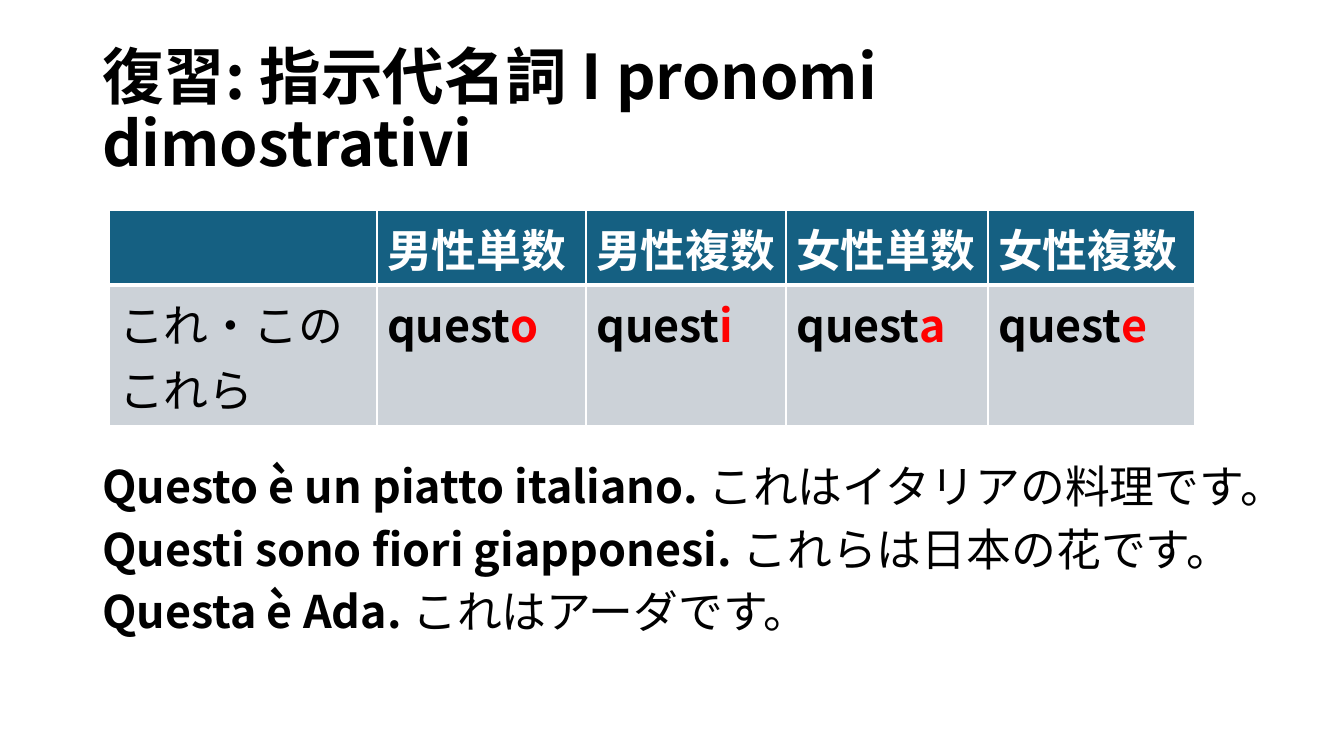
"""Build a slide that reviews the Italian demonstrative pronouns in Japanese."""

from dataclasses import dataclass

import lxml.etree
import pptx
import pptx.dml.color
import pptx.enum.text
import pptx.oxml.ns
import pptx.shapes.base
import pptx.slide
import pptx.table
import pptx.text.text
import pptx.util

PX = 9071
FONT_NAME = "Noto Sans CJK JP"
BLACK = pptx.dml.color.RGBColor(0x00, 0x00, 0x00)
WHITE = pptx.dml.color.RGBColor(0xFF, 0xFF, 0xFF)
RED = pptx.dml.color.RGBColor(0xFF, 0x00, 0x00)
TEAL = pptx.dml.color.RGBColor(0x15, 0x60, 0x82)
PALE_GREY = pptx.dml.color.RGBColor(0xCC, 0xD2, 0xD8)


@dataclass(frozen=True)
class Box:
    left: int
    top: int
    width: int
    height: int

    def emu(self) -> tuple[int, int, int, int]:
        return self.left * PX, self.top * PX, self.width * PX, self.height * PX


@dataclass(frozen=True)
class Pronoun:
    heading: str
    ending: str
    width: int


@dataclass(frozen=True)
class Example:
    italian: str
    japanese: str


TITLE = "復習: 指示代名詞 I pronomi dimostrativi"
TITLE_BOX = Box(92, 40, 1159, 146)
TABLE_BOX = Box(109, 210, 1085, 214)
BODY_BOX = Box(92, 460, 1213, 294)
LABEL_WIDTH = 268
ROW_HEIGHTS = (75, 139)
LABELS = ("これ・この", "これら")
STEM = "quest"
PRONOUNS = (
    Pronoun("男性単数", "o", 209),
    Pronoun("男性複数", "i", 200),
    Pronoun("女性単数", "a", 202),
    Pronoun("女性複数", "e", 206),
)
EXAMPLES = (
    Example("Questo è un piatto italiano. ", "これはイタリアの料理です。"),
    Example("Questi sono fiori giapponesi. ", "これらは日本の花です。"),
    Example("Questa è Ada. ", "これはアーダです。"),
)


def place(shape: pptx.shapes.base.BaseShape, box: Box) -> None:
    """Move and size a shape."""
    shape.left, shape.top, shape.width, shape.height = box.emu()


def format_paragraph(
    paragraph: pptx.text.text._Paragraph,
    size: int = 32,
    color: pptx.dml.color.RGBColor = BLACK,
    bold: bool | None = None,
) -> None:
    """Set the font shared by all runs of a paragraph."""
    font = paragraph.font
    font.name = FONT_NAME
    font.size = pptx.util.Pt(size)
    font.color.rgb = color
    font.bold = bold
    east_asian = lxml.etree.SubElement(font._element, pptx.oxml.ns.qn("a:ea"))
    east_asian.set("typeface", FONT_NAME)


def add_run(paragraph: pptx.text.text._Paragraph, text: str) -> pptx.text.text.Font:
    """Append a run and return its font."""
    run = paragraph.add_run()
    run.text = text
    return run.font


def format_cell(
    cell: pptx.table._Cell, color: pptx.dml.color.RGBColor, thick_side: str
) -> None:
    """Give a table cell a plain fill and one thick white border."""
    cell.fill.solid()
    cell.fill.fore_color.rgb = color
    qn = pptx.oxml.ns.qn
    line = lxml.etree.Element(qn(thick_side), w=str(pptx.util.Pt(3)))
    fill = lxml.etree.SubElement(line, qn("a:solidFill"))
    lxml.etree.SubElement(fill, qn("a:srgbClr"), val=str(WHITE))
    cell._tc.get_or_add_tcPr().insert(0, line)


def add_title(slide: pptx.slide.Slide) -> None:
    """Write the title."""
    title = slide.shapes.title
    place(title, TITLE_BOX)
    frame = title.text_frame
    frame.text = TITLE
    frame.vertical_anchor = pptx.enum.text.MSO_ANCHOR.MIDDLE
    frame.auto_size = pptx.enum.text.MSO_AUTO_SIZE.NONE
    paragraph = frame.paragraphs[0]
    paragraph.alignment = pptx.enum.text.PP_ALIGN.LEFT
    paragraph.line_spacing = 0.9
    format_paragraph(paragraph, size=44, bold=True)


def add_examples(slide: pptx.slide.Slide) -> None:
    """Write the example sentences with their translations."""
    body = slide.placeholders[1]
    place(body, BODY_BOX)
    frame = body.text_frame
    frame.auto_size = pptx.enum.text.MSO_AUTO_SIZE.NONE
    for index, example in enumerate(EXAMPLES):
        paragraph = frame.add_paragraph() if index else frame.paragraphs[0]
        paragraph.line_spacing = 0.9
        paragraph.space_before = pptx.util.Pt(10)
        properties = paragraph._p.get_or_add_pPr()
        properties.set("marL", "0")
        properties.set("indent", "0")
        lxml.etree.SubElement(properties, pptx.oxml.ns.qn("a:buNone"))
        format_paragraph(paragraph)
        add_run(paragraph, example.italian).bold = True
        add_run(paragraph, example.japanese).bold = False


def add_pronoun_table(slide: pptx.slide.Slide) -> None:
    """Draw the table of pronouns."""
    table = slide.shapes.add_table(
        len(ROW_HEIGHTS), len(PRONOUNS) + 1, *TABLE_BOX.emu()
    ).table
    table.horz_banding = False
    for row, height in zip(table.rows, ROW_HEIGHTS):
        row.height = height * PX
    table.columns[0].width = LABEL_WIDTH * PX
    for column in range(len(table.columns)):
        format_cell(table.cell(0, column), TEAL, "a:lnB")
        format_cell(table.cell(1, column), PALE_GREY, "a:lnT")

    label_frame = table.cell(1, 0).text_frame
    label_frame.text = "\n".join(LABELS)
    for paragraph in label_frame.paragraphs:
        format_paragraph(paragraph, bold=False)

    for column, pronoun in enumerate(PRONOUNS, start=1):
        table.columns[column].width = pronoun.width * PX
        heading = table.cell(0, column).text_frame
        heading.text = pronoun.heading
        format_paragraph(heading.paragraphs[0], color=WHITE, bold=True)
        paragraph = table.cell(1, column).text_frame.paragraphs[0]
        format_paragraph(paragraph, bold=True)
        add_run(paragraph, STEM)
        add_run(paragraph, pronoun.ending).color.rgb = RED


def main() -> None:
    """Build and save the presentation."""
    presentation = pptx.Presentation()
    presentation.slide_width = pptx.util.Inches(13.33)
    presentation.slide_height = pptx.util.Inches(7.5)
    slide = presentation.slides.add_slide(presentation.slide_layouts[1])
    add_title(slide)
    add_examples(slide)
    add_pronoun_table(slide)
    presentation.save("out.pptx")


if __name__ == "__main__":
    main()
